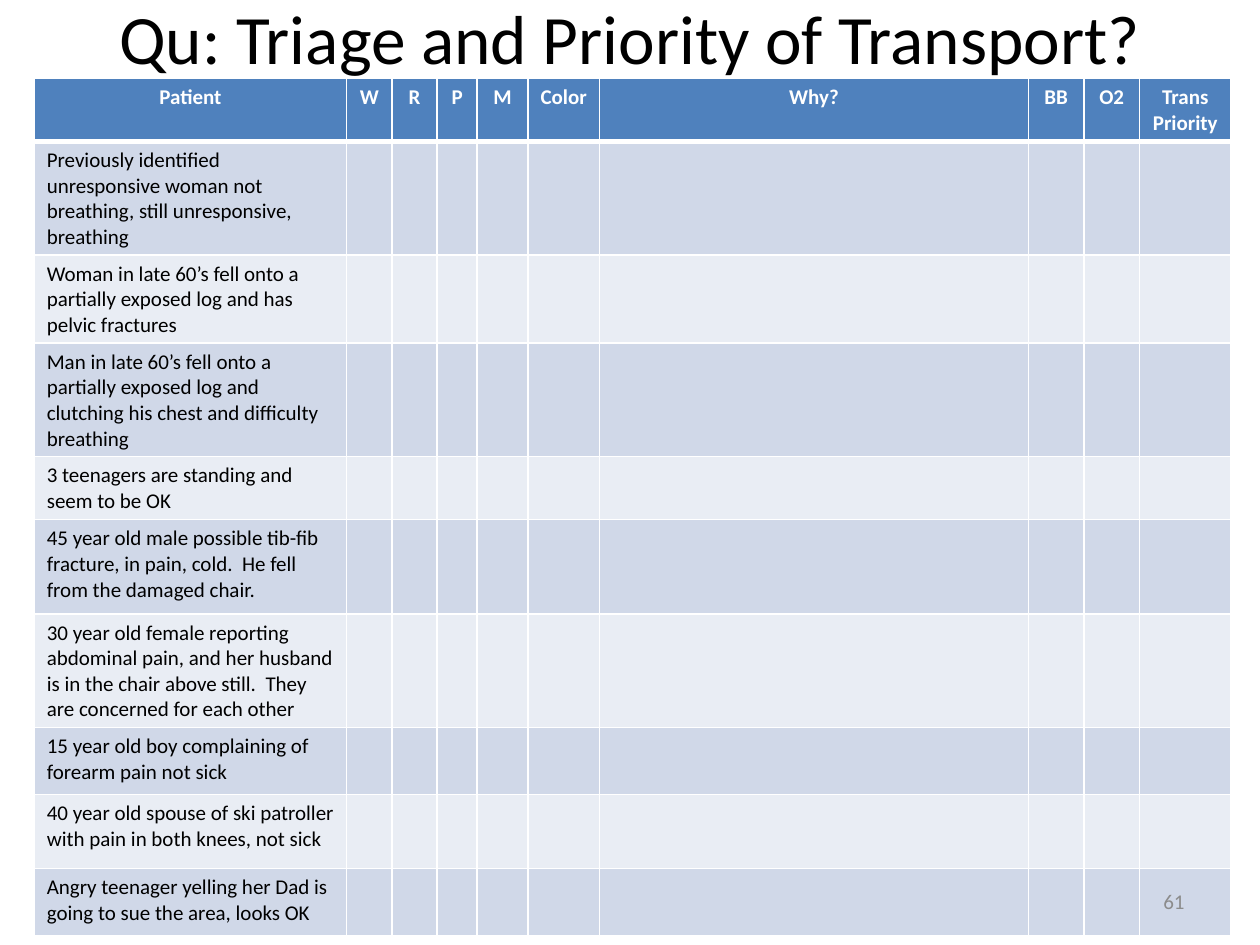
from lxml import etree
from pptx import Presentation
from pptx.dml.color import RGBColor
from pptx.enum.text import MSO_ANCHOR, PP_ALIGN
from pptx.oxml.ns import qn
from pptx.util import Cm, Pt

LEFT, MID, RIGHT = PP_ALIGN.LEFT, PP_ALIGN.CENTER, PP_ALIGN.RIGHT
MIDDLE = MSO_ANCHOR.MIDDLE

TITLE = "Qu: Triage and Priority of Transport?"
PAGE = "61"
HEADS = [
    ("Patient", 6.3), ("W", 0.91), ("R", 0.91), ("P", 0.81), ("M", 1.02),
    ("Color", 1.45), ("Why?", 8.64), ("BB", 1.12), ("O2", 1.12),
    ("Trans Priority", 1.85),
]
CASES = [
    ("Previously identified unresponsive woman not breathing, still unresponsive, breathing", 1.35),
    ("Woman in late 60’s fell onto a partially exposed log and has pelvic fractures", 1.47),
    ("Man in late 60’s fell onto a partially exposed log and clutching his chest and difficulty breathing", 1.83),
    ("3 teenagers are standing and seem to be OK", 0.99),
    ("45 year old male possible tib-fib fracture, in pain, cold.  He fell from the damaged chair.", 1.9),
    ("30 year old female reporting abdominal pain, and her husband is in the chair above still.  They are concerned for each other", 2.08),
    ("15 year old boy complaining of forearm pain not sick", 1.35),
    ("40 year old spouse of ski patroller with pain in both knees, not sick", 1.5),
    ("Angry teenager yelling her Dad is going to sue the area, looks OK", 1.35),
]
HEAD_ROW = 1.27
BLUE, WHITE, BLACK, GRAY = "4F81BD", "FFFFFF", "000000", "8C8C8C"
BANDS = ["D0D8E8", "E9EDF4"]


def tint(code):
    return RGBColor.from_string(code)


def write(frame, text, size=12, color=BLACK, bold=False, align=LEFT):
    frame.word_wrap = True
    para = frame.paragraphs[0]
    para.alignment = align
    run = para.add_run()
    run.text = text
    font = run.font
    font.name, font.size, font.bold = "Calibri", Pt(size), bold
    font.color.rgb = tint(color)


def label(slide, box, text, **style):
    frame = slide.shapes.add_textbox(*map(Cm, box)).text_frame
    frame.vertical_anchor = MIDDLE
    write(frame, text, **style)


def edge(cell, **widths):
    props = cell._tc.get_or_add_tcPr()
    for spot, (side, width) in enumerate(widths.items()):
        line = etree.Element(qn("a:ln" + side), w=str(Pt(width)))
        fill = etree.SubElement(line, qn("a:solidFill"))
        etree.SubElement(fill, qn("a:srgbClr"), val=WHITE)
        props.insert(spot, line)


def paint(cell, color, top=1, base=1):
    cell.fill.solid()
    cell.fill.fore_color.rgb = tint(color)
    edge(cell, L=1, R=1, T=top, B=base)


def grid(slide):
    wide = [width for _, width in HEADS]
    tall = [HEAD_ROW] + [height for _, height in CASES]
    box = (0.69, 1.58, sum(wide), sum(tall))
    table = slide.shapes.add_table(len(tall), len(wide), *map(Cm, box)).table
    for col, width in zip(table.columns, wide):
        col.width = Cm(width)
    for row, height in zip(table.rows, tall):
        row.height = Cm(height)
    for c, (head, _) in enumerate(HEADS):
        cell = table.cell(0, c)
        paint(cell, BLUE, base=3)
        write(cell.text_frame, head, color=WHITE, bold=True, align=MID)
    for r, (case, _) in enumerate(CASES, 1):
        for c in range(len(HEADS)):
            paint(table.cell(r, c), BANDS[(r - 1) % 2], top=3 if r == 1 else 1)
        write(table.cell(r, 0).text_frame, case)


def main():
    deck = Presentation()
    deck.slide_width, deck.slide_height = Cm(25.4), Cm(19.05)
    slide = deck.slides.add_slide(deck.slide_layouts[6])
    label(slide, (1.27, -0.84, 22.86, 3.18), TITLE, size=39.6, align=MID)
    grid(slide)
    label(slide, (18.2, 17.66, 5.93, 1.01), PAGE, color=GRAY, align=RIGHT)
    deck.save("out.pptx")


if __name__ == "__main__":
    main()
